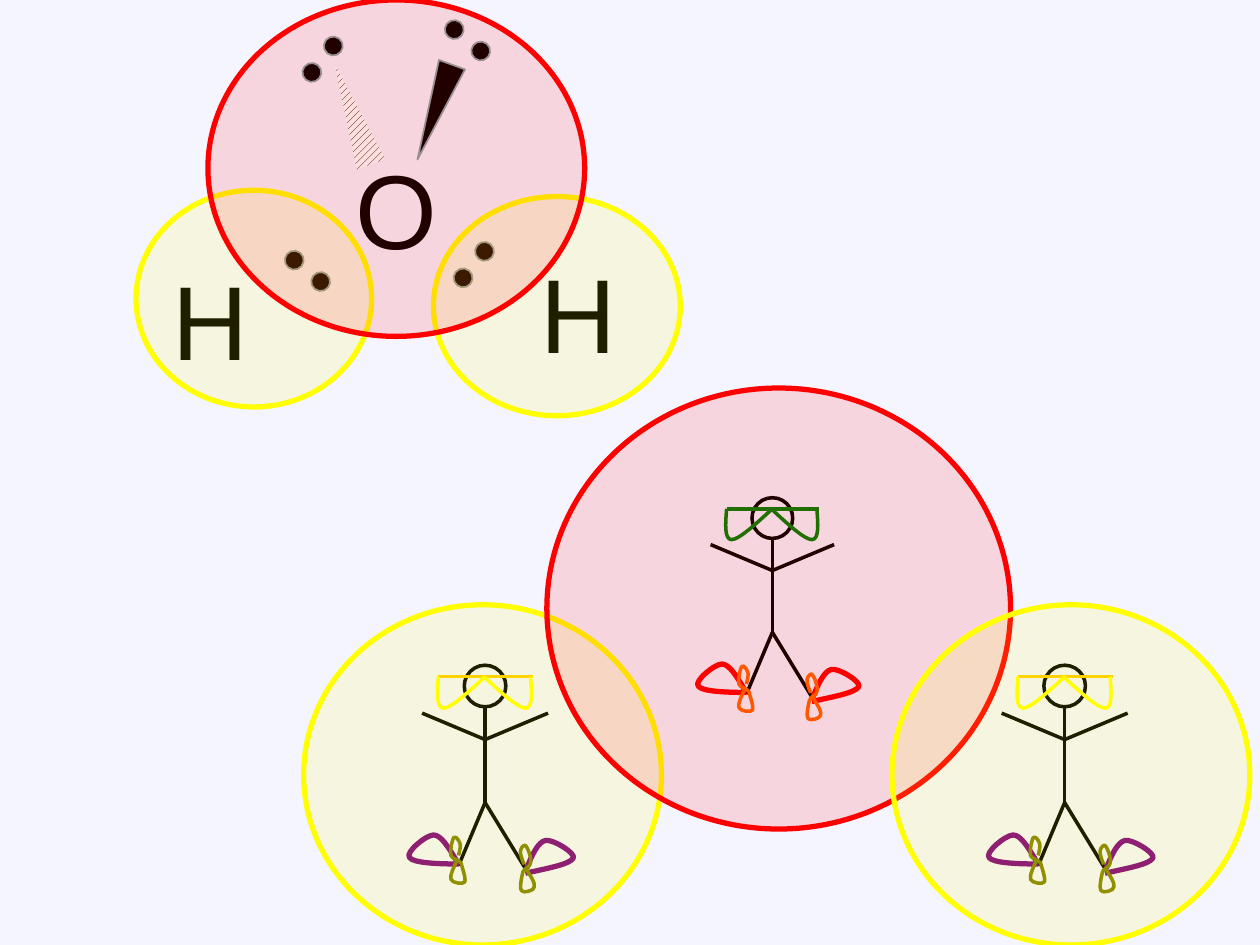
from math import cos, radians, sin

from pptx import Presentation
from pptx.dml.color import RGBColor
from pptx.enum.dml import MSO_PATTERN
from pptx.enum.shapes import MSO_CONNECTOR, MSO_SHAPE as Preset
from pptx.enum.text import MSO_AUTO_SIZE
from pptx.oxml.ns import qn
from pptx.util import Inches, Pt
from lxml.etree import SubElement

color = RGBColor.from_string


def paint(shape, line=None, width=1, fill=None, opacity=None):
    if line:
        shape.line.color.rgb = color(line)
        shape.line.width = Pt(width)
    else:
        shape.line.fill.background()
    SubElement(shape._element.spPr, qn("a:effectLst"))
    if fill:
        shape.fill.solid()
        shape.fill.fore_color.rgb = color(fill)
    elif hasattr(shape, "fill"):
        shape.fill.background()
    if opacity:
        tint = shape._element.spPr.find(qn("a:solidFill"))[0]
        SubElement(tint, qn("a:alpha")).set("val", str(opacity * 1000))


def add_curve(shapes, points, pivot, angle):
    turn = radians(angle)
    upright = []
    for x, y in points:
        across, down = x - pivot[0], y - pivot[1]
        upright.append((Inches(pivot[0] + across * cos(turn) + down * sin(turn)),
                        Inches(pivot[1] - across * sin(turn) + down * cos(turn))))
    builder = shapes.build_freeform(*upright[0])
    builder.add_line_segments(upright[1:], close=False)
    curve = builder.convert_to_shape()
    curve.rotation = angle
    outline = next(curve._element.iter(qn("a:path")))
    segments = outline.findall(qn("a:lnTo"))
    for first in range(0, len(segments), 3):
        bezier = SubElement(outline, qn("a:cubicBezTo"))
        for segment in segments[first:first + 3]:
            bezier.append(segment[0])
            outline.remove(segment)
    return curve


deck = Presentation()
deck.slide_width, deck.slide_height = Inches(10), Inches(7.5)
page = deck.slides.add_slide(deck.slide_layouts[6])
page.background.fill.solid()
page.background.fill.fore_color.rgb = color("F5F5FF")

molecule = page.shapes.add_group_shape().shapes
letters = (("O", 2.72, 1.1, 0.86), ("H", 4.19, 1.92, 0.81), ("H", 1.27, 1.98, 0.81))
for symbol, left, top, width in letters:
    box = molecule.add_textbox(Inches(left), Inches(top), Inches(width), Inches(1.11))
    box.text_frame.word_wrap = False
    box.text_frame.auto_size = MSO_AUTO_SIZE.SHAPE_TO_FIT_TEXT
    para = box.text_frame.paragraphs[0]
    para.text = symbol
    para.font.name = "Arial"
    para.font.size = Pt(60)
    para.font.color.rgb = color("000000")

front_wedge = molecule.add_shape(Preset.ISOSCELES_TRIANGLE, Inches(3.34), Inches(0.49),
                                 Inches(0.22), Inches(0.8))
front_wedge.rotation = 20
front_wedge._element.spPr.xfrm.set("flipV", "1")
paint(front_wedge, "8AA6A8", 1, "000000")

back_wedge = molecule.add_shape(Preset.ISOSCELES_TRIANGLE, Inches(2.68), Inches(0.48),
                                Inches(0.24), Inches(0.85))
back_wedge.rotation = 340
paint(back_wedge)
back_wedge.fill.patterned()
back_wedge.fill.pattern = MSO_PATTERN.WIDE_UPWARD_DIAGONAL
back_wedge.fill.fore_color.rgb = color("000000")
back_wedge.fill.back_color.rgb = color("FFFFFF")

falling, rising = (0.21, 0.17, 38.6), (-0.17, 0.21, 128.6)
for left, top, (across, down, angle) in ((3.53, 0.16, falling), (2.57, 0.29, rising),
                                         (3.77, 1.92, rising), (2.26, 1.99, falling)):
    electron_pair = page.shapes.add_group_shape().shapes
    for index in range(2):
        electron = electron_pair.add_shape(
            Preset.OVAL, Inches(left + index * across), Inches(top + index * down),
            Inches(0.15), Inches(0.15))
        electron.rotation = angle
        paint(electron, "8AA6A8", 1, "000000")

limbs = [
    ((0, 0.34), (0, 1.09)),
    ((0, 1.09), (0.33, 1.63)),
    ((0, 1.09), (-0.21, 1.59)),
    ((0, 0.59), (0.5, 0.38)),
    ((0, 0.59), (-0.5, 0.38)),
]
right_fin = [(0.33, 1.61), (0.37, 1.51), (0.42, 1.4), (0.48, 1.39), (0.54, 1.38),
             (0.72, 1.49), (0.7, 1.53), (0.67, 1.58), (0.5, 1.61), (0.32, 1.65)]
right_strap = [(0.31, 1.58), (0.29, 1.54), (0.28, 1.5), (0.28, 1.48), (0.28, 1.45),
               (0.31, 1.42), (0.32, 1.43), (0.34, 1.45), (0.37, 1.53), (0.36, 1.57),
               (0.36, 1.6), (0.31, 1.61), (0.3, 1.64), (0.29, 1.68), (0.27, 1.77),
               (0.29, 1.79), (0.3, 1.81), (0.39, 1.79), (0.39, 1.76), (0.4, 1.73),
               (0.36, 1.67), (0.32, 1.61)]
left_fin = [(-0.23, 1.55), (-0.29, 1.45), (-0.35, 1.35), (-0.41, 1.35), (-0.47, 1.35),
            (-0.64, 1.49), (-0.6, 1.53), (-0.57, 1.57), (-0.39, 1.58), (-0.21, 1.58)]
left_strap = [(-0.21, 1.51), (-0.2, 1.47), (-0.19, 1.43), (-0.2, 1.41), (-0.21, 1.38),
              (-0.24, 1.35), (-0.25, 1.37), (-0.26, 1.39), (-0.28, 1.47), (-0.27, 1.51),
              (-0.26, 1.54), (-0.21, 1.54), (-0.19, 1.57), (-0.18, 1.61), (-0.15, 1.69),
              (-0.16, 1.72), (-0.17, 1.74), (-0.26, 1.73), (-0.27, 1.7), (-0.28, 1.67),
              (-0.25, 1.61), (-0.22, 1.54)]
left_lens = [(-0.37, 0.09), (-0.38, 0.21), (-0.39, 0.34), (-0.33, 0.34),
             (-0.27, 0.34), (-0.13, 0.21), (0, 0.09)]
right_lens = [(-0.01 - x, y) for x, y in left_lens]
mask_bar = ((-0.37, 0.09), (0.38, 0.09))

yellow, red = ("FFFF00", 12), ("FF0000", 13)
yellow_gear = ("800080", "808000", "FFCC00", "FFFF00")
red_gear = ("FF0000", "FF6600", "008000", "008000")
scene = [
    ("shell", (3.44, 1.56, 1.96, 1.74), yellow),
    ("shell", (1.08, 1.51, 1.87, 1.72), yellow),
    ("shell", (1.65, 0, 2.99, 2.67), red),
    ("diver", (3.85, 5.28, 1), yellow_gear),
    ("diver", (6.13, 3.95, 0.98), red_gear),
    ("shell", (2.41, 4.8, 2.84, 2.7), yellow),
    ("shell", (4.34, 3.08, 3.68, 3.5), red),
    ("diver", (8.45, 5.28, 1), yellow_gear),
    ("shell", (7.08, 4.8, 2.84, 2.7), yellow),
]
for kind, place, look in scene:
    if kind == "shell":
        shell = page.shapes.add_shape(Preset.OVAL, *map(Inches, place))
        paint(shell, look[0], 3, *look)
        continue

    center, top, scale = place
    fin_color, strap_color, bar_color, lens_color = look
    diver = page.shapes.add_group_shape().shapes
    head_size = Inches(0.33 * scale)
    head = diver.add_shape(Preset.OVAL, Inches(center) - head_size // 2, Inches(top),
                           head_size, head_size)
    paint(head, "000000", 2)

    strokes = [(limb, "000000") for limb in limbs] + [(mask_bar, bar_color)]
    for ends, line_color in strokes:
        (x1, y1), (x2, y2) = ends
        line = diver.add_connector(
            MSO_CONNECTOR.STRAIGHT,
            Inches(center + x1 * scale), Inches(top + y1 * scale),
            Inches(center + x2 * scale), Inches(top + y2 * scale))
        paint(line, line_color, 2)

    for points, pivot, angle, line_color, width in (
            (right_fin, (0.53, 1.54), 14.5, fin_color, 3),
            (right_strap, (0.31, 1.62), 343, strap_color, 2),
            (left_fin, (-0.43, 1.51), 336.1, fin_color, 3),
            (left_strap, (-0.21, 1.55), 7.6, strap_color, 2),
            (left_lens, (-0.19, 0.21), 0, lens_color, 2),
            (right_lens, (0.18, 0.21), 0, lens_color, 2)):
        placed = [(center + x * scale, top + y * scale) for x, y in [pivot, *points]]
        curve = add_curve(diver, placed[1:], placed[0], angle)
        paint(curve, line_color, width)

deck.save("out.pptx")
